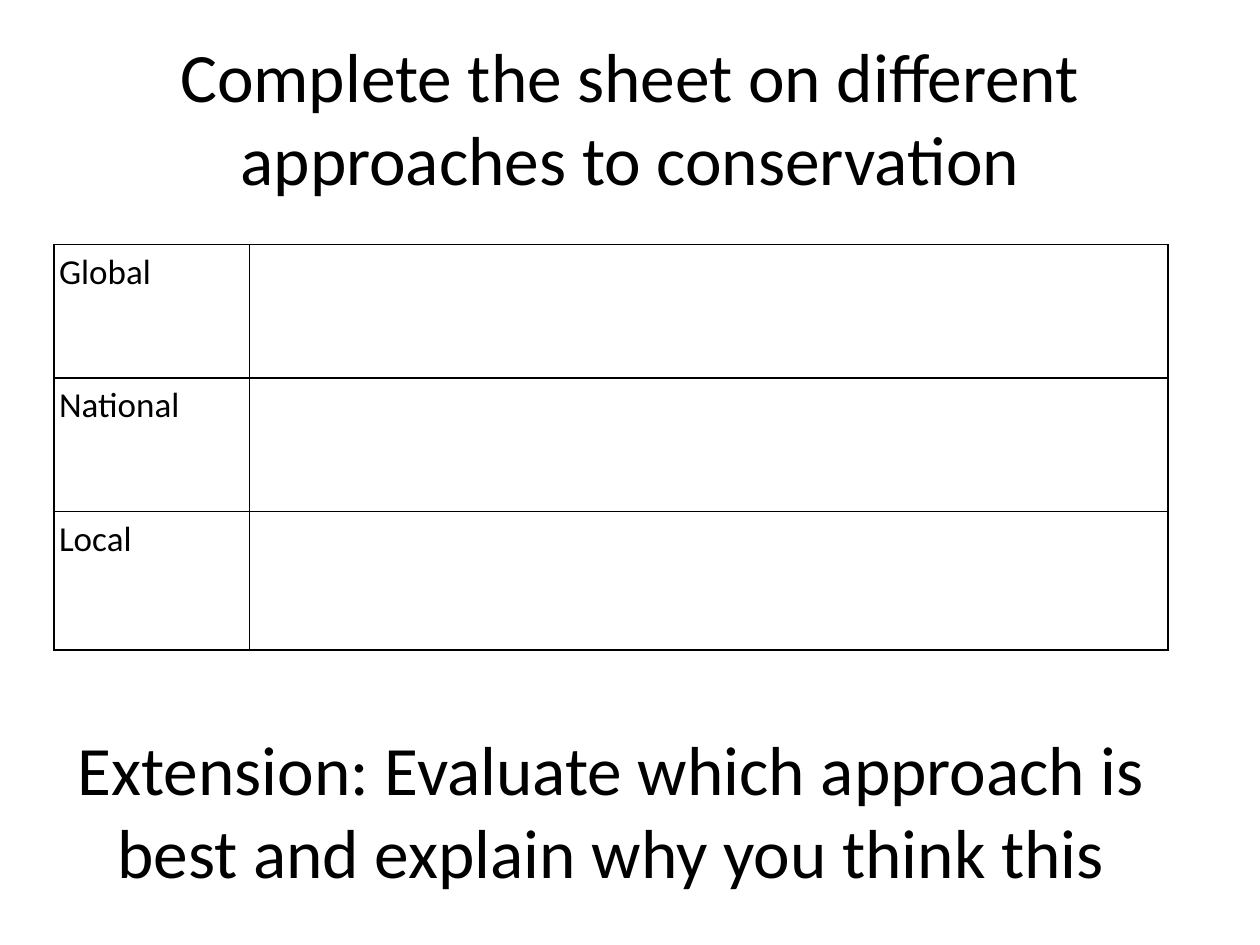
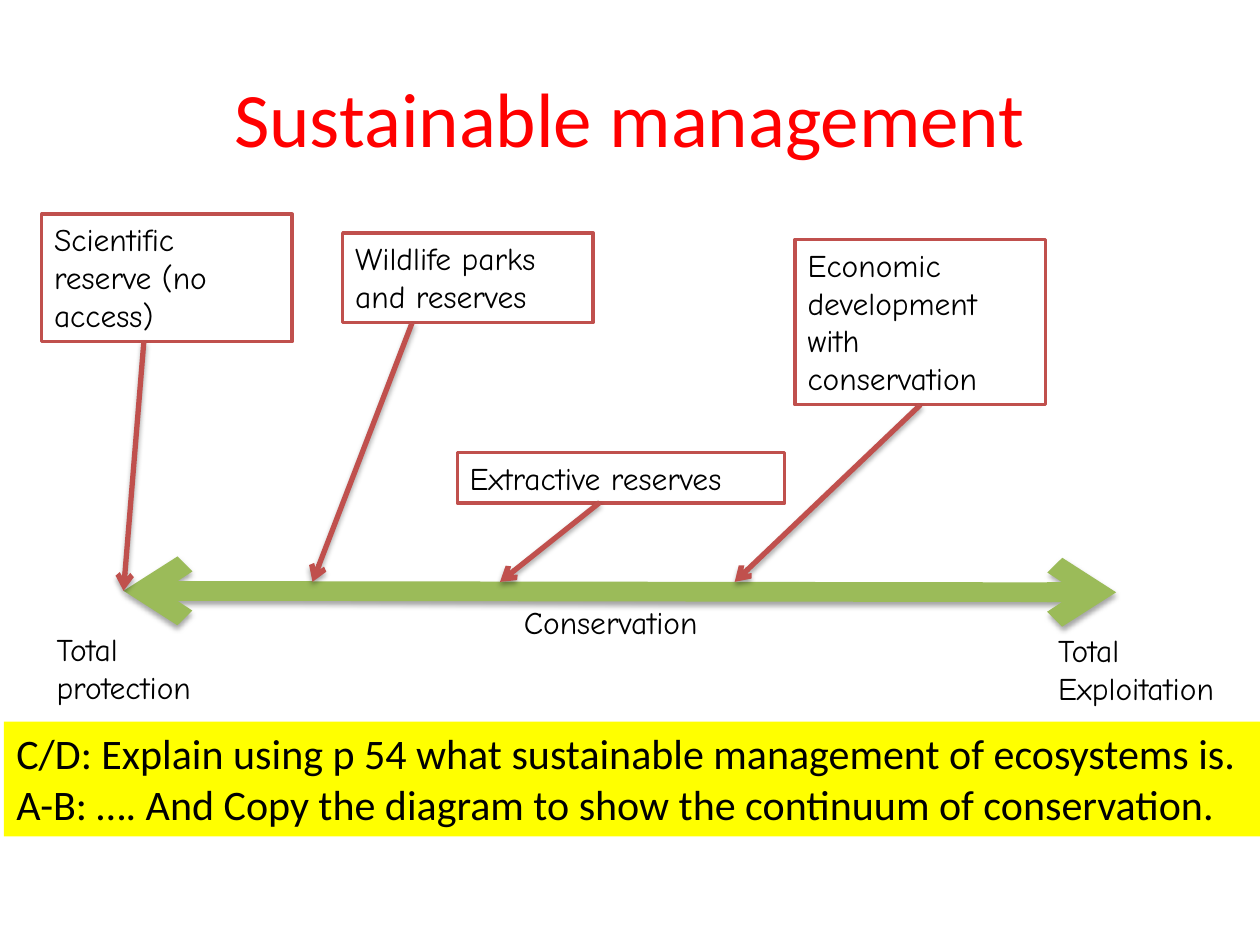
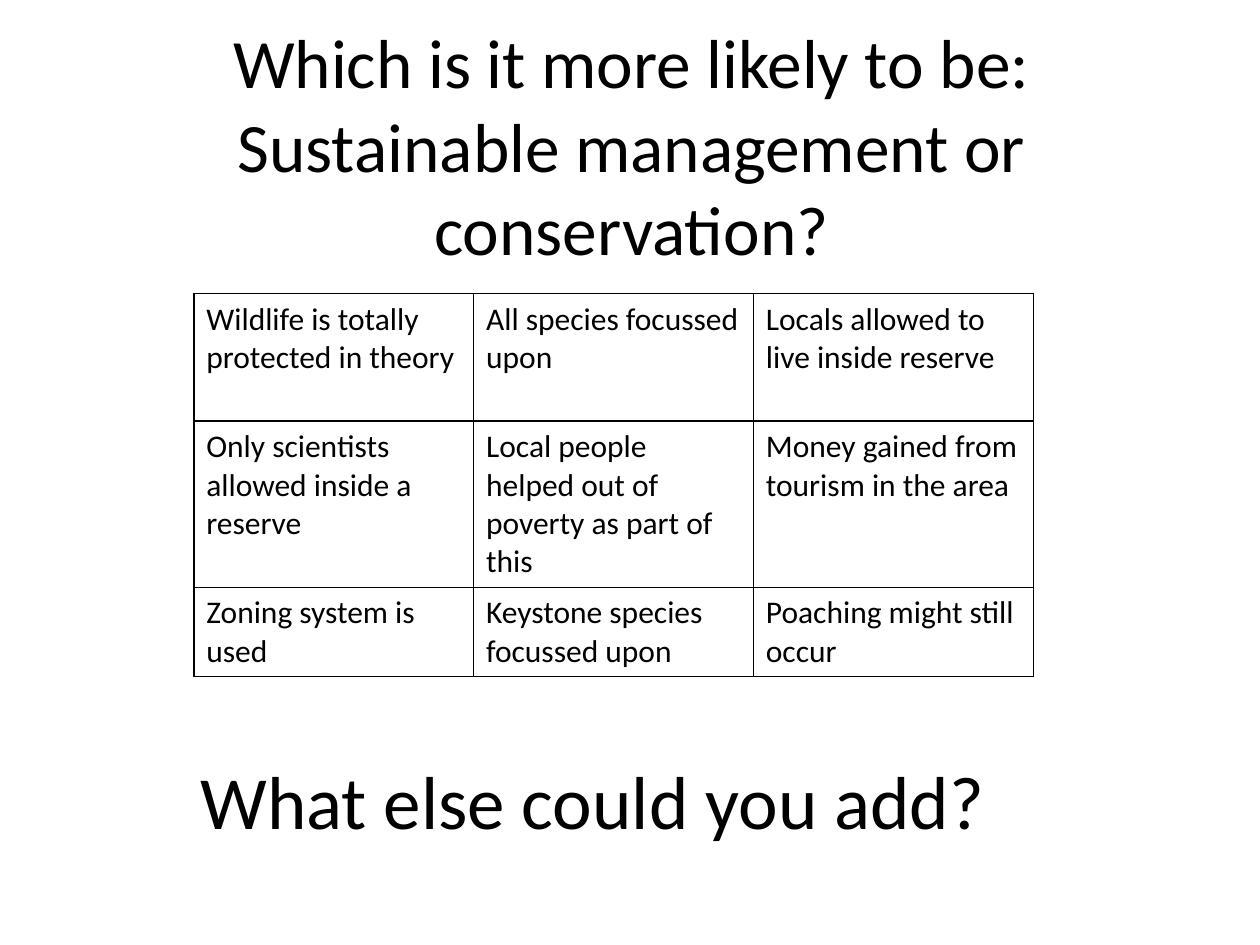
from dataclasses import dataclass

from lxml.etree import SubElement as Sub
from pptx import Presentation
from pptx.dml.color import RGBColor as Rgb
from pptx.enum.shapes import MSO_CONNECTOR as Link, MSO_SHAPE as Kind
from pptx.enum.text import MSO_ANCHOR as Anchor, MSO_AUTO_SIZE as Fit, PP_ALIGN as Align
from pptx.oxml.ns import qn
from pptx.util import Cm, Pt


@dataclass(frozen=True)
class Theme:
    body: str = "Calibri"
    hand: str = "Comic Neue"
    ink: str = "000000"
    paper: str = "FFFFFF"
    red: str = "FF0000"
    brick: str = "C0504D"
    green: str = "9BBB59"
    yellow: str = "FFFF00"
    head: float = 39.6
    ask: float = 42.9
    big: float = 44
    task: float = 24
    level: float = 20
    small: float = 18


THEME = Theme()
HEAD_SIZE = (22.86, 3.18)

LEVELS = [["Global", ""], ["National", ""], ["Local", ""]]
CLAIMS = [
    ["Wildlife is totally protected in theory", "All species focussed upon",
     "Locals allowed to live inside reserve"],
    ["Only scientists allowed inside a reserve",
     "Local people helped out of poverty as part of this",
     "Money gained from tourism in the area"],
    ["Zoning system is used", "Keystone species focussed upon",
     "Poaching might still occur"],
]
LABELS = [
    ("Conservation", (10.31, 12.04, 8.99, 1.02)),
    ("Total protection", (0.89, 12.57, 3.99, 1.8)),
    ("Total Exploitation", (21.08, 12.6, 4.39, 1.8)),
]
# Text, box, arrow start, arrow end
STAGES = [
    ("Scientific reserve (no access)", (0.84, 4.32, 5.05, 2.57), (2.9, 6.88), (2.49, 11.91)),
    ("Wildlife parks and reserves", (6.91, 4.7, 5.05, 1.8), (8.31, 6.5), (6.3, 11.73)),
    ("Economic development with conservation", (16.03, 4.83, 5.05, 3.33),
     (18.55, 8.16), (14.81, 11.73)),
    ("Extractive reserves", (9.22, 9.12, 6.6, 1.02), (12.09, 10.13), (10.08, 11.73)),
]
TASKS = [
    "C/D: Explain using p 54 what sustainable management of ecosystems is.",
    "A-B: …. And Copy the diagram to show the continuum of conservation.",
]


def cms(nums):
    return [Cm(num) for num in nums]


def write(frame, lines, size, font=THEME.body, color=THEME.ink, align=Align.LEFT, space=None):
    """Fill a text frame with one paragraph per line."""
    frame.word_wrap = True
    for i, line in enumerate(lines):
        para = frame.paragraphs[0] if i == 0 else frame.add_paragraph()
        para.alignment = align
        para.line_spacing = space
        run = para.add_run()
        run.text = line
        run.font.size = Pt(size)
        run.font.name = font
        run.font.color.rgb = Rgb.from_string(color)


def add_head(slide, text, left, top, size=THEME.head, color=THEME.ink):
    frame = slide.shapes.add_textbox(*cms((left, top) + HEAD_SIZE)).text_frame
    frame.vertical_anchor = Anchor.MIDDLE
    write(frame, [text], size, color=color, align=Align.CENTER)


def add_label(slide, text, area):
    frame = slide.shapes.add_textbox(*cms(area)).text_frame
    write(frame, [text], THEME.small, THEME.hand)


def add_box(slide, lines, area, fill, size, font, edge=None):
    box = slide.shapes.add_shape(Kind.RECTANGLE, *cms(area))
    box.shadow.inherit = False
    box.fill.solid()
    box.fill.fore_color.rgb = Rgb.from_string(fill)
    if edge:
        box.line.color.rgb = Rgb.from_string(edge)
        box.line.width = Pt(2)
    else:
        box.line.fill.background()
    box.text_frame.vertical_anchor = Anchor.TOP
    write(box.text_frame, lines, size, font)
    box.text_frame.auto_size = Fit.SHAPE_TO_FIT_TEXT
    return box


def add_arrow(slide, start, end, color, width, tips=("tailEnd",)):
    """Draw a line with open tips and a soft shadow below it."""
    line = slide.shapes.add_connector(Link.STRAIGHT, *cms(start + end))
    line.line.color.rgb = Rgb.from_string(color)
    line.line.width = Pt(width)
    props = line._element.spPr
    for tip in tips:
        Sub(props.find(qn("a:ln")), qn(f"a:{tip}"), type="arrow")
    shade = Sub(Sub(props, qn("a:effectLst")), qn("a:outerShdw"), blurRad=str(Pt(3.1)),
                dist=str(Pt(1.8)), dir="5400000", rotWithShape="0")
    tint = Sub(shade, qn("a:srgbClr"), val=THEME.ink)
    Sub(tint, qn("a:alpha"), val="35000")
    return line


def edge_cell(cell):
    props = cell._tc.get_or_add_tcPr()
    for side in ("lnL", "lnR", "lnT", "lnB"):
        line = Sub(props, qn(f"a:{side}"), w=str(Pt(1)))
        Sub(Sub(line, qn("a:solidFill")), qn("a:srgbClr"), val=THEME.ink)
    cell.fill.background()


def add_grid(slide, rows, left, top, wides, highs, size, inset=(0.25, 0.13), space=None):
    area = cms((left, top, sum(wides), sum(highs)))
    grid = slide.shapes.add_table(len(rows), len(wides), *area).table
    grid.first_row = grid.horz_banding = False
    for col, wide in zip(grid.columns, wides):
        col.width = Cm(wide)
    for row, high, texts in zip(grid.rows, highs, rows):
        row.height = Cm(high)
        for cell, text in zip(row.cells, texts):
            cell.margin_left = cell.margin_right = Cm(inset[0])
            cell.margin_top = cell.margin_bottom = Cm(inset[1])
            edge_cell(cell)
            if text:
                write(cell.text_frame, [text], size, space=space)


def show_levels(slide):
    add_head(slide, "Complete the sheet on different approaches to conservation", 1.27, 0.76)
    add_head(slide, "Extension: Evaluate which approach is best and explain why you think this",
             0.89, 14.73)
    add_grid(slide, LEVELS, 1.09, 4.93, (3.94, 18.52), (2.69, 2.69, 2.79),
             THEME.level, (0.1, 0), 1.15)


def show_scale(slide):
    add_head(slide, "Sustainable management", 1.27, 0.76, THEME.big, THEME.red)
    add_arrow(slide, (2.49, 11.91), (22.5, 11.94), THEME.green, 11.25, ("headEnd", "tailEnd"))
    for text, area in LABELS:
        add_label(slide, text, area)
    for text, area, start, end in STAGES:
        box = add_box(slide, [text], area, THEME.paper, THEME.small, THEME.hand, THEME.brick)
        arrow = add_arrow(slide, start, end, THEME.brick, 3)
        if abs(area[0] + area[2] / 2 - start[0]) < 0.05:
            arrow.begin_connect(box, 2)
    add_box(slide, TASKS, (0.08, 14.55, 25.4, 2.31), THEME.yellow, THEME.task, THEME.body)


def show_claims(slide):
    add_head(slide, "Which is it more likely to be: Sustainable management or conservation?",
             1.3, 1.32)
    add_grid(slide, CLAIMS, 3.91, 5.92, (5.64,) * 3, (2.57, 3.35, 1.8), THEME.small)
    add_head(slide, "What else could you add?", 0.51, 14.53, THEME.ask)


def main():
    deck = Presentation()
    deck.slide_width, deck.slide_height = Cm(25.4), Cm(19.05)
    for show in (show_levels, show_scale, show_claims):
        show(deck.slides.add_slide(deck.slide_layouts[6]))
    deck.save("out.pptx")


if __name__ == "__main__":
    main()
